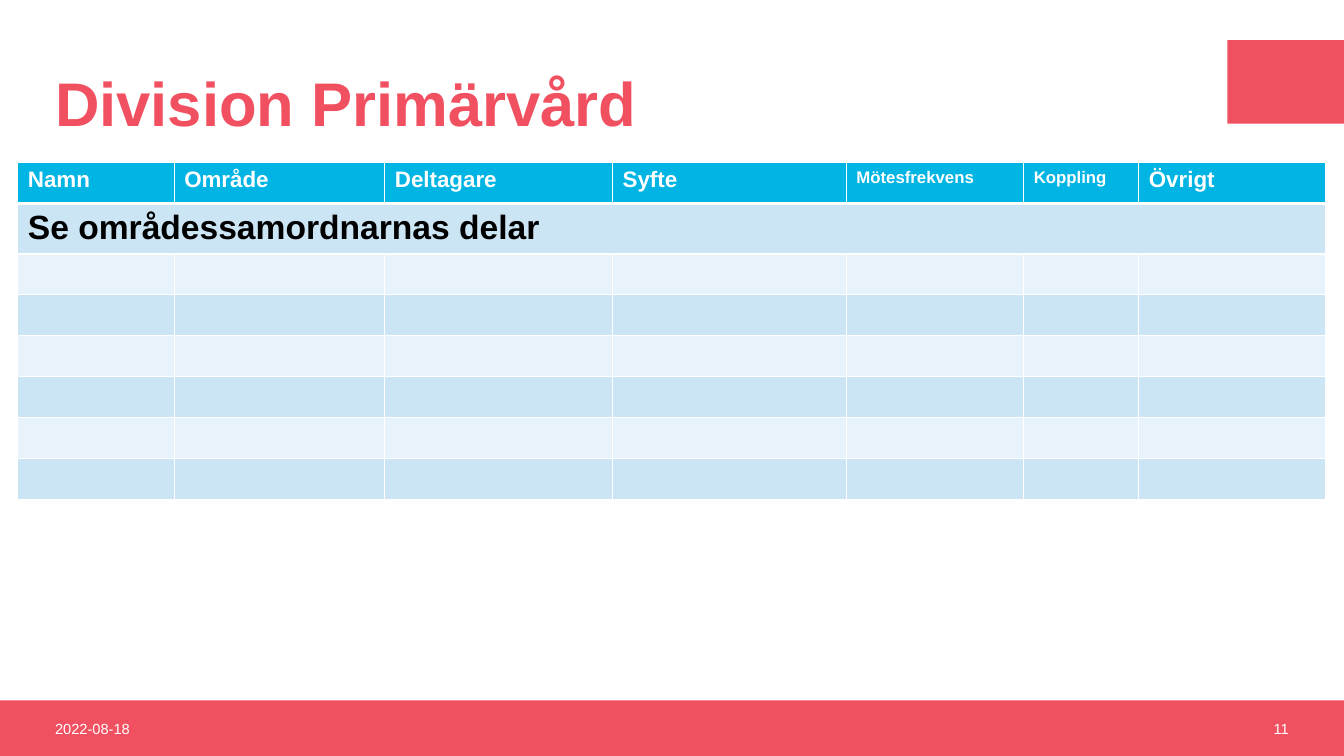
"""Build the slide with the meeting table of Division Primärvård."""
from dataclasses import dataclass

from lxml import etree
from pptx import Presentation
from pptx.dml.color import RGBColor
from pptx.enum.shapes import MSO_SHAPE
from pptx.enum.text import MSO_ANCHOR, PP_ALIGN
from pptx.oxml.ns import qn
from pptx.util import Cm, Pt

RECTANGLE = MSO_SHAPE.RECTANGLE
MIDDLE = MSO_ANCHOR.MIDDLE
LEFT, RIGHT = PP_ALIGN.LEFT, PP_ALIGN.RIGHT

TITLE = "Division Primärvård"
DATE = "2022-08-18"
PAGE_NUMBER = "11"
MESSAGE = "Se områdessamordnarnas delar"
COLUMNS = [
    ("Namn", 3.94),
    ("Område", 5.31),
    ("Deltagare", 5.74),
    ("Syfte", 5.89),
    ("Mötesfrekvens", 4.47),
    ("Koppling", 2.9),
    ("Övrigt", 4.7),
]
SMALL_HEADINGS = ("Mötesfrekvens", "Koppling")
ROW_COUNT = 8
ROW_HEIGHT = 1.03

SLIDE_WIDTH, SLIDE_HEIGHT = 33.87, 19.05
MARGIN = 1.14
FOOTER_TOP, FOOTER_HEIGHT = 17.65, 1.4
FOOTER_TEXT_WIDTH = 7.62
TAB_WIDTH, TAB_HEIGHT, TAB_TOP = 2.94, 2.11, 1.01
TABLE_LEFT, TABLE_TOP = 0.45, 4.1


@dataclass(frozen=True)
class Theme:
    """Colours, font and type sizes."""
    font: str = "Arial"
    accent: str = "F15060"
    heading_fill: str = "00B4E4"
    bands: tuple = ("E7F2FA", "CCE5F5")
    light: str = "FFFFFF"
    dark: str = "000000"
    title: float = 44
    message: float = 24
    heading: float = 16
    small_heading: float = 12
    footer: float = 10.5


THEME = Theme()


def write(text_frame, text, size, color, bold=False, alignment=LEFT):
    paragraph = text_frame.paragraphs[0]
    paragraph.text = text
    paragraph.alignment = alignment
    font = paragraph.font
    font.name, font.size, font.bold = THEME.font, Pt(size), bold
    font.color.rgb = RGBColor.from_string(color)
    return paragraph


def add_text(slide, box, *style, **options):
    text_frame = slide.shapes.add_textbox(*map(Cm, box)).text_frame
    text_frame.word_wrap = True
    text_frame.vertical_anchor = MIDDLE
    return write(text_frame, *style, **options)


def add_block(slide, *box):
    block = slide.shapes.add_shape(RECTANGLE, *map(Cm, box))
    block.shadow.inherit = False
    block.fill.solid()
    block.fill.fore_color.rgb = RGBColor.from_string(THEME.accent)
    block.line.fill.background()


def format_cell(cell, fill, top, bottom):
    cell.fill.solid()
    cell.fill.fore_color.rgb = RGBColor.from_string(fill)
    properties = cell._tc.get_or_add_tcPr()
    sides = (("a:lnL", 1), ("a:lnR", 1), ("a:lnT", top), ("a:lnB", bottom))
    for position, (side, width) in enumerate(sides):
        line = etree.Element(qn(side), w=str(Pt(width)))
        solid = etree.SubElement(line, qn("a:solidFill"))
        etree.SubElement(solid, qn("a:srgbClr"), val=THEME.light)
        properties.insert(position, line)


def add_meeting_table(slide):
    width = sum(column_width for _, column_width in COLUMNS)
    table = slide.shapes.add_table(
        ROW_COUNT, len(COLUMNS), Cm(TABLE_LEFT), Cm(TABLE_TOP),
        Cm(width), Cm(ROW_COUNT * ROW_HEIGHT)).table
    for column, (_, column_width) in zip(table.columns, COLUMNS):
        column.width = Cm(column_width)
    for index, row in enumerate(table.rows):
        row.height = Cm(ROW_HEIGHT)
        fill = THEME.bands[index % 2] if index else THEME.heading_fill
        for cell in row.cells:
            format_cell(cell, fill, 3 if index == 1 else 1, 1 if index else 3)
    for cell, (heading, _) in zip(table.rows[0].cells, COLUMNS):
        size = THEME.small_heading if heading in SMALL_HEADINGS else THEME.heading
        write(cell.text_frame, heading, size, THEME.light, bold=True)
    message_cell = table.cell(1, 0)
    message_cell.merge(table.cell(1, len(COLUMNS) - 1))
    write(message_cell.text_frame, MESSAGE, THEME.message, THEME.dark, bold=True)


def main():
    presentation = Presentation()
    presentation.slide_width = Cm(SLIDE_WIDTH)
    presentation.slide_height = Cm(SLIDE_HEIGHT)
    slide = presentation.slides.add_slide(presentation.slide_layouts[6])

    add_block(slide, 0, FOOTER_TOP, SLIDE_WIDTH, FOOTER_HEIGHT)
    add_block(slide, SLIDE_WIDTH - TAB_WIDTH, TAB_TOP, TAB_WIDTH, TAB_HEIGHT)
    title = add_text(slide, (MARGIN, TAB_TOP, 29.49, 3.35),
                     TITLE, THEME.title, THEME.accent, bold=True)
    title.line_spacing = 0.9

    number_left = SLIDE_WIDTH - MARGIN - FOOTER_TEXT_WIDTH
    for left, text, alignment in ((MARGIN, DATE, LEFT),
                                  (number_left, PAGE_NUMBER, RIGHT)):
        add_text(slide, (left, FOOTER_TOP, FOOTER_TEXT_WIDTH, FOOTER_HEIGHT),
                 text, THEME.footer, THEME.light, alignment=alignment)
    add_meeting_table(slide)
    presentation.save("out.pptx")


if __name__ == "__main__":
    main()
